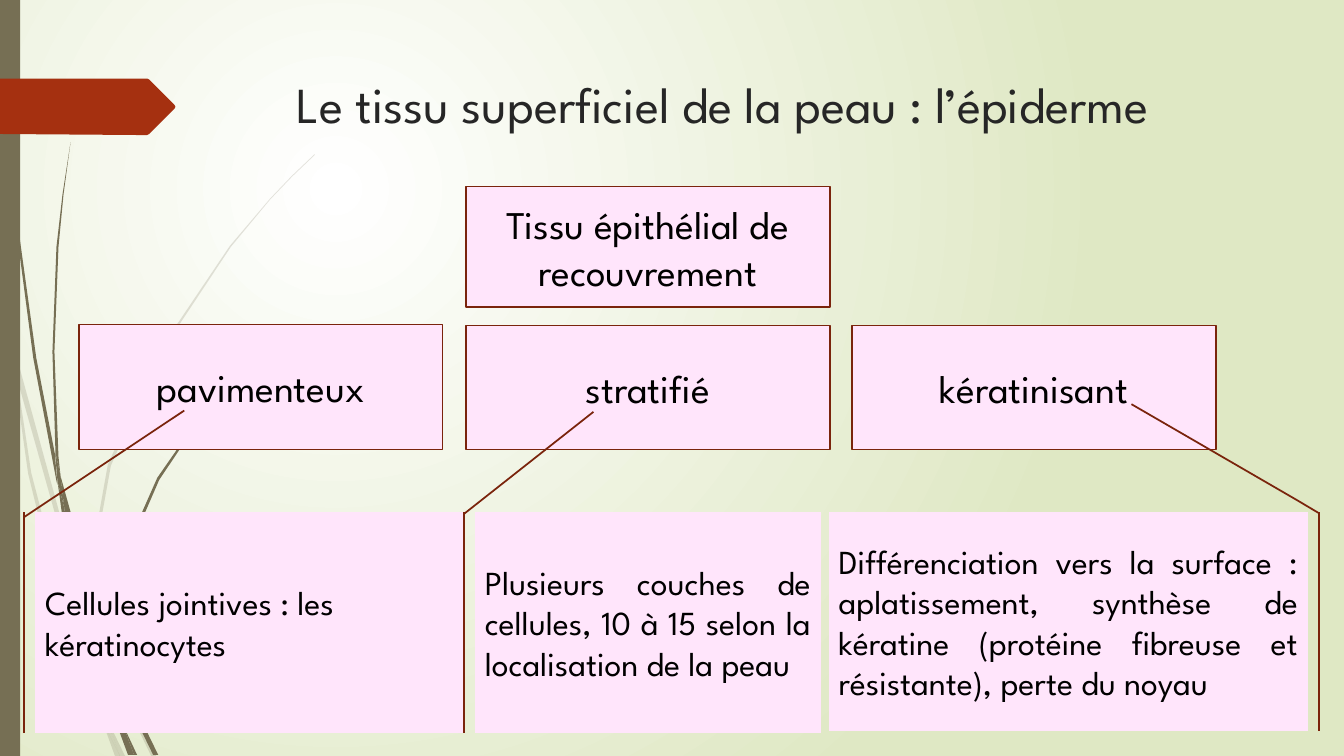
from lxml import etree
from pptx import Presentation
from pptx import util as u
from pptx.dml.color import RGBColor
from pptx.enum import shapes, text
from pptx.oxml import ns

FONT = "League Spartan"
BLACK = RGBColor(0x00, 0x00, 0x00)
TITLE_GREY = RGBColor(0x26, 0x26, 0x26)
WHITE = RGBColor(0xFF, 0xFF, 0xFF)
PALE_GREEN = RGBColor(0xDF, 0xE8, 0xC4)
OLIVE = RGBColor(0x76, 0x6F, 0x54)
RED = RGBColor(0xA5, 0x30, 0x10)
DARK_RED = RGBColor(0x7A, 0x24, 0x0C)
PINK = RGBColor(0xFF, 0xE5, 0xFB)

RECTANGLE = shapes.MSO_SHAPE.RECTANGLE
CALLOUT = shapes.MSO_SHAPE.LINE_CALLOUT_1_ACCENT_BAR
BENT_CALLOUT = shapes.MSO_SHAPE.LINE_CALLOUT_2_ACCENT_BAR
LEFT, CENTER, JUSTIFY = text.PP_ALIGN.LEFT, text.PP_ALIGN.CENTER, text.PP_ALIGN.JUSTIFY

# Outline points of the grass blades, in inches
PALE_BLADES = [
    [(0.11, 3.5), (0.09, 3.22), (0, 2.82), (0, 2.99), (0.1, 3.44)],
    [(0.58, 5.22), (0.84, 5.99), (0.85, 5.86), (0.62, 5.2), (0.14, 3.45), (0.17, 3.76)],
    [(0.92, 6.07), (0.88, 5.96), (0.88, 6.1), (1.23, 6.94), (1.5, 7.5), (1.55, 7.5),
     (1.27, 6.92)],
    [(1.19, 7.5), (1.24, 7.5), (1.05, 7.11)],
    [(0.93, 6.83), (0.7, 6.19), (0.31, 4.69), (0.17, 3.76), (0.11, 3.5), (0.28, 4.7),
     (0.65, 6.21), (0.92, 6.93), (1.01, 7.14), (0.99, 7.07)],
    [(0.84, 5.99), (0.87, 6.46), (0.93, 6.83), (0.96, 6.92), (1.05, 7.11), (1.03, 7.06),
     (0.91, 6.46), (0.88, 6.1), (0.88, 6.08)],
    [(0.88, 5.84), (1.1, 4.62), (1.6, 3.49), (2.29, 2.45), (2.68, 1.98), (2.9, 1.75),
     (3.12, 1.54), (3.12, 1.53), (2.89, 1.75), (2.68, 1.97), (2.28, 2.44), (1.58, 3.48),
     (1.07, 4.61), (0.85, 5.84), (0.85, 5.86), (0.88, 5.96)],
    [(1.01, 7.14), (1.14, 7.5), (1.19, 7.5)],
    [(0.88, 6.08), (0.88, 6.1), (0.88, 5.96), (0.85, 5.86), (0.84, 5.99)],
    [(0.96, 6.92), (0.93, 6.83), (0.99, 7.07), (1.01, 7.14), (1.19, 7.5), (1.05, 7.11)],
]
DARK_BLADES = [
    [(0.07, 1.1), (0.17, 2.33), (0.33, 3.55), (0.56, 4.77), (0.57, 4.81), (0.55, 4.57),
     (0.55, 4.53), (0.36, 3.55), (0.19, 2.32), (0.08, 1.09), (0.05, 0.48), (0.04, 0),
     (0.03, 0), (0.04, 0.48)],
    [(0.88, 5.92), (1.06, 6.45), (1.06, 6.33), (1.06, 6.31), (0.93, 5.9), (0.6, 4.72),
     (0.64, 5.05)],
    [(1.13, 6.49), (1.1, 6.41), (1.11, 6.56), (1.32, 7.08), (1.52, 7.49), (1.57, 7.49),
     (1.36, 7.06)],
    [(1.1, 6.91), (0.98, 6.57), (0.72, 5.56), (0.64, 5.05), (0.57, 4.77), (0.68, 5.57),
     (0.93, 6.59), (1.11, 7.08), (1.17, 7.22), (1.16, 7.17)],
    [(0.6, 4.72), (0.58, 4.53), (0.54, 3.49), (0.58, 2.45), (0.63, 1.93), (0.7, 1.41),
     (0.62, 1.93), (0.56, 2.45), (0.52, 3.49), (0.55, 4.49)],
    [(1.33, 7.49), (1.36, 7.49), (1.22, 7.19)],
    [(0.57, 4.77), (0.64, 5.05), (0.6, 4.72), (0.55, 4.49), (0.55, 4.53)],
    [(1.11, 6.33), (1.25, 5.52), (1.58, 4.76), (2.05, 4.06), (2.31, 3.74), (2.45, 3.59),
     (2.61, 3.44), (2.6, 3.44), (2.45, 3.58), (2.31, 3.73), (2.04, 4.05), (1.56, 4.74),
     (1.22, 5.51), (1.06, 6.31), (1.1, 6.41)],
    [(1.17, 7.22), (1.27, 7.49), (1.31, 7.49)],
    [(1.06, 6.45), (1.1, 6.91), (1.16, 7.06), (1.22, 7.19), (1.21, 7.16), (1.11, 6.56),
     (1.09, 6.51)],
    [(1.06, 6.45), (1.09, 6.51), (1.11, 6.56), (1.1, 6.41), (1.06, 6.31), (1.06, 6.33)],
    [(1.16, 7.06), (1.1, 6.91), (1.16, 7.17), (1.17, 7.22), (1.3, 7.49), (1.33, 7.49),
     (1.22, 7.19)],
]
TITLE_ARROW = [(1.74, 1.06), (1.73, 1.08), (1.48, 1.33), (1.46, 1.34), (1.36, 1.34),
               (0, 1.33), (0, 0.78), (1.46, 0.78), (1.48, 0.79), (1.73, 1.04)]

# Label, left, top, height
TISSUE_BOXES = [
    ("Tissu épithélial de recouvrement", 4.62, 1.85, 1.2),
    ("pavimenteux", 0.78, 3.22, 1.24),
    ("stratifié", 4.62, 3.23, 1.23),
    ("kératinisant", 8.45, 3.23, 1.23),
]
# Kind, label, left, width, height, alignment, adjustments
EXPLANATIONS = [
    (CALLOUT, "Cellules jointives : les kératinocytes",
     0.35, 4.26, 2.19, LEFT, (0.023, -0.026, -0.46, 0.347)),
    (BENT_CALLOUT, "Différenciation vers la surface : aplatissement, synthèse de kératine "
     "(protéine fibreuse et résistante), perte du noyau",
     8.22, 4.75, 2.17, JUSTIFY, (0.006, 1.024, -0.054, 0.978, -0.493, 0.632)),
    (CALLOUT, "Plusieurs couches de cellules, 10 à 15 selon la localisation de la peau",
     4.71, 3.43, 2.19, JUSTIFY, (0.008, -0.031, -0.454, 0.343)),
]


class SlideBuilder:
    def __init__(self, slide, font):
        self.slide = slide
        self.font = font

    def background(self, inner, outer):
        """Fill the background with a circular gradient centred up and left."""
        fill = self.slide.background.fill
        fill.gradient()
        for stop, color in zip(fill.gradient_stops, (inner, outer)):
            stop.color.rgb = color
        linear = self.slide.background._cSld.find(".//" + ns.qn("a:lin"))
        circle = etree.Element(ns.qn("a:path"), {"path": "circle"})
        etree.SubElement(circle, ns.qn("a:fillToRect"),
                         l="50000", t="50000", r="100000", b="100000")
        linear.getparent().replace(linear, circle)

    def paint(self, shape, fill, line=None):
        shape.shadow.inherit = False
        shape.fill.solid()
        shape.fill.fore_color.rgb = fill
        if line is None:
            shape.line.fill.background()
        else:
            shape.line.color.rgb = line
            shape.line.width = u.Pt(1.25)

    def outline(self, points, fill, alpha=None):
        """Draw a closed polygon; alpha is its opacity in percent."""
        corners = [(u.Inches(x), u.Inches(y)) for x, y in points]
        builder = self.slide.shapes.build_freeform(*corners[0])
        builder.add_line_segments(corners[1:], close=True)
        shape = builder.convert_to_shape()
        self.paint(shape, fill)
        if alpha is not None:
            color = shape._element.spPr.find(ns.qn("a:solidFill")).find(ns.qn("a:srgbClr"))
            etree.SubElement(color, ns.qn("a:alpha"), val=str(alpha * 1000))

    def add_label(self, shape, label, size, color, align, anchor):
        frame = shape.text_frame
        frame.word_wrap = True
        frame.vertical_anchor = anchor
        paragraph = frame.paragraphs[0]
        paragraph.alignment = align
        run = paragraph.add_run()
        run.text = label
        run.font.name = self.font
        run.font.size = u.Pt(size)
        run.font.color.rgb = color

    def title(self, label, *box):
        shape = self.slide.shapes.add_textbox(*map(u.Inches, box))
        self.add_label(shape, label, 36, TITLE_GREY, LEFT, text.MSO_ANCHOR.TOP)

    def preset(self, kind, box, fill, line=None, adjustments=()):
        shape = self.slide.shapes.add_shape(kind, *map(u.Inches, box))
        for index, value in enumerate(adjustments):
            shape.adjustments[index] = value
        self.paint(shape, fill, line)
        return shape

    def label_box(self, kind, label, box, size, align, adjustments=()):
        shape = self.preset(kind, box, PINK, DARK_RED, adjustments)
        self.add_label(shape, label, size, BLACK, align, text.MSO_ANCHOR.MIDDLE)


def main():
    presentation = Presentation()
    presentation.slide_width = u.Inches(13.33)
    presentation.slide_height = u.Inches(7.5)
    slide = presentation.slides.add_slide(presentation.slide_layouts[6])
    builder = SlideBuilder(slide, FONT)

    builder.background(WHITE, PALE_GREEN)
    for blade in PALE_BLADES:
        builder.outline(blade, OLIVE, alpha=20)
    for blade in DARK_BLADES:
        builder.outline(blade, OLIVE)
    builder.preset(RECTANGLE, (0, 0, 0.2, 7.5), OLIVE)
    builder.outline(TITLE_ARROW, RED)

    builder.title("Le tissu superficiel de la peau : l’épiderme", 2.84, 0.68, 10.36, 0.98)
    for label, left, top, height in TISSUE_BOXES:
        builder.label_box(RECTANGLE, label, (left, top, 3.61, height), 28, CENTER)
    for kind, label, left, width, height, align, adjustments in EXPLANATIONS:
        builder.label_box(kind, label, (left, 5.08, width, height), 24, align, adjustments)

    presentation.save("out.pptx")


if __name__ == "__main__":
    main()
